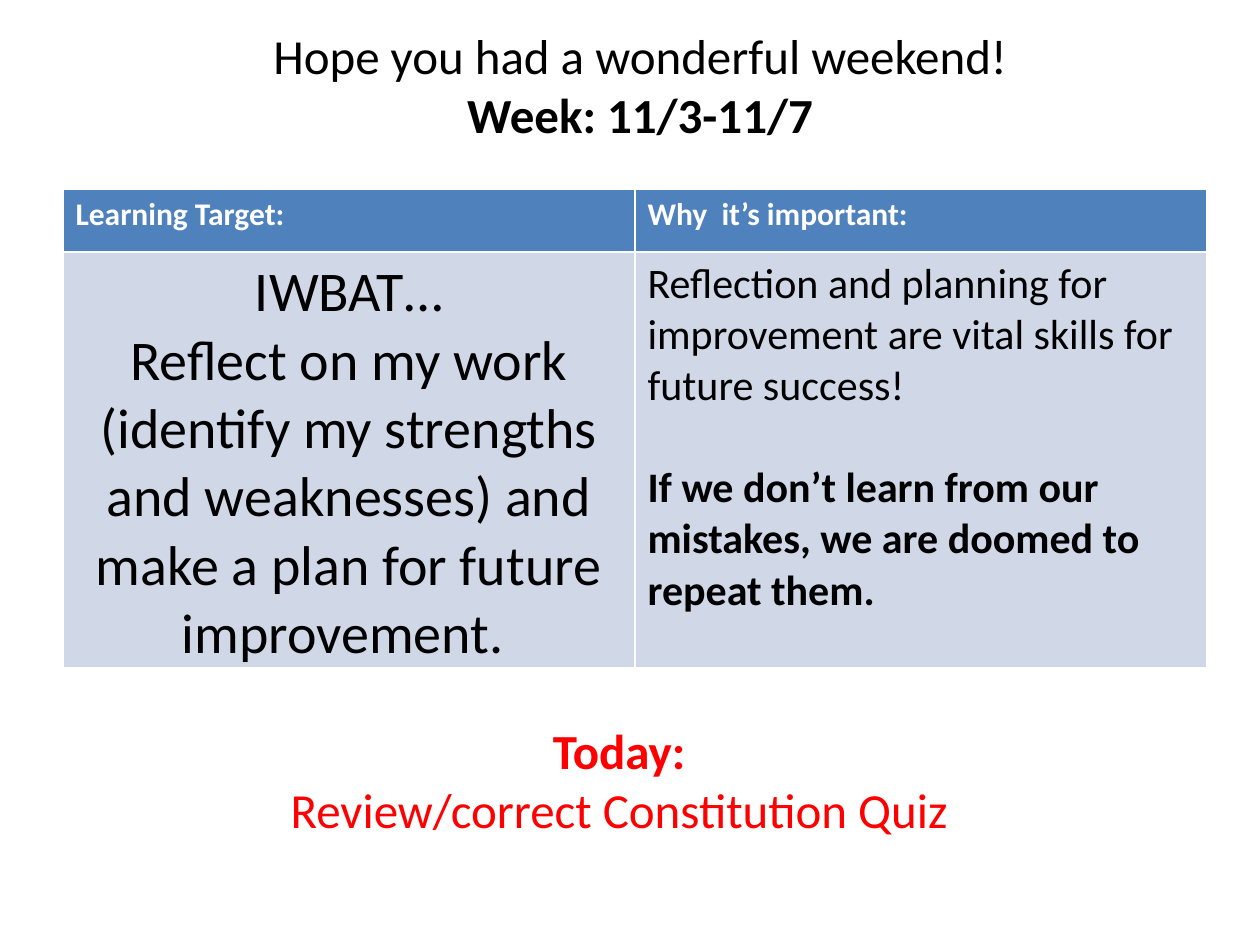
from dataclasses import dataclass

from pptx import Presentation
from pptx.dml.color import RGBColor
from pptx.enum.text import MSO_ANCHOR, PP_ALIGN
from pptx.util import Cm, Pt


@dataclass(frozen=True)
class Theme:
    font: str = "Calibri"
    ink: str = "000000"
    header_ink: str = "FFFFFF"
    accent: str = "FF0000"
    header_fill: str = "4F81BD"
    body_fill: str = "D0D8E8"
    banner_size: int = 28
    header_size: int = 18
    target_size: int = 32
    reason_size: int = 24
    reason_gap: int = 29


THEME = Theme()

# Each paragraph is a list of (text, bold) lines.
GREETING = [[("Hope you had a wonderful weekend!", False), ("Week: 11/3-11/7", True)]]
HEADERS = ["Learning Target:", "Why  it’s important:"]
TARGET = [
    [("IWBAT…", False)],
    [("Reflect on my work (identify my strengths and weaknesses) "
      "and make a plan for future improvement. ", False)],
]
REASON = [
    [("Reflection and planning for improvement are vital skills for future success!", False)],
    [("If we don’t learn from our mistakes, we are doomed to repeat them.", True)],
]
TODAY = [[("Today:", True)], [("Review/correct Constitution Quiz", False)]]

GREETING_BOX = (2.11, 0.43, 21.59, 2.54)
TABLE_BOX = (1.27, 3.81, 23.06, 9.3)
TODAY_BOX = (1.47, 14.4, 22.02, 2.64)
ROW_HEIGHTS = (1.27, 8.03)


def write(frame, paragraphs, size, color, align=PP_ALIGN.LEFT, gap=0):
    """Fill a text frame; lines of one paragraph are parted by line breaks."""
    frame.word_wrap = True
    for index, lines in enumerate(paragraphs):
        paragraph = frame.add_paragraph() if index else frame.paragraphs[0]
        paragraph.alignment = align
        if index and gap:
            paragraph.space_before = Pt(gap)
        for number, (text, bold) in enumerate(lines):
            if number:
                paragraph.add_line_break()
            run = paragraph.add_run()
            run.text = text
            run.font.name = THEME.font
            run.font.size = Pt(size)
            run.font.bold = bold
            run.font.color.rgb = RGBColor.from_string(color)


def add_banner(slide, box, paragraphs, color, anchor):
    frame = slide.shapes.add_textbox(*map(Cm, box)).text_frame
    frame.vertical_anchor = anchor
    write(frame, paragraphs, THEME.banner_size, color, PP_ALIGN.CENTER)


def fill_cell(cell, fill, *text_args, **text_options):
    cell.fill.solid()
    cell.fill.fore_color.rgb = RGBColor.from_string(fill)
    write(cell.text_frame, *text_args, **text_options)


def add_goals(slide):
    goals = slide.shapes.add_table(2, len(HEADERS), *map(Cm, TABLE_BOX)).table
    for row, height in zip(goals.rows, ROW_HEIGHTS):
        row.height = Cm(height)
    for column, header in enumerate(HEADERS):
        fill_cell(goals.cell(0, column), THEME.header_fill, [[(header, True)]],
                  THEME.header_size, THEME.header_ink)
    fill_cell(goals.cell(1, 0), THEME.body_fill, TARGET, THEME.target_size,
              THEME.ink, align=PP_ALIGN.CENTER)
    fill_cell(goals.cell(1, 1), THEME.body_fill, REASON, THEME.reason_size,
              THEME.ink, gap=THEME.reason_gap)


def main():
    deck = Presentation()
    deck.slide_width, deck.slide_height = Cm(25.4), Cm(19.05)
    slide = deck.slides.add_slide(deck.slide_layouts[6])
    add_banner(slide, GREETING_BOX, GREETING, THEME.ink, MSO_ANCHOR.MIDDLE)
    add_goals(slide)
    add_banner(slide, TODAY_BOX, TODAY, THEME.accent, MSO_ANCHOR.TOP)
    deck.save("out.pptx")


if __name__ == "__main__":
    main()
